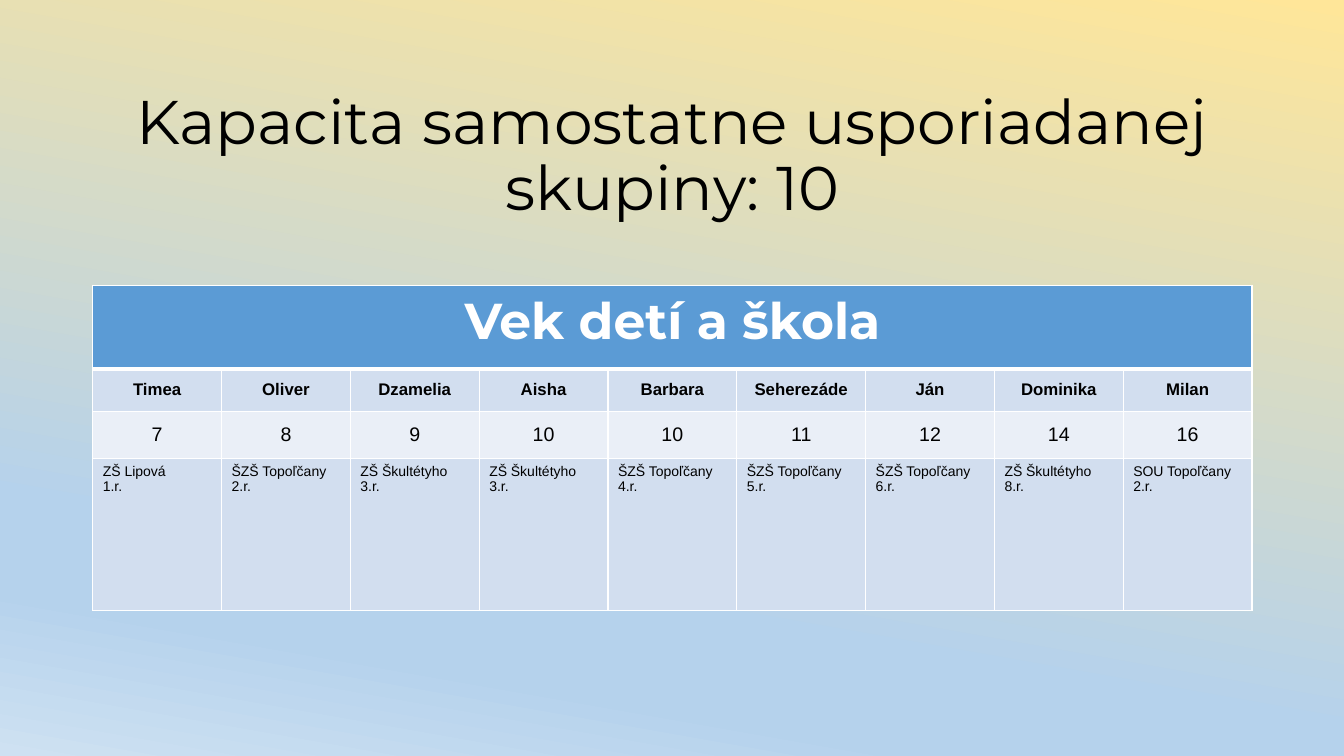
import dataclasses

import lxml.etree
import pptx
import pptx.dml.color
import pptx.enum.text
import pptx.oxml
import pptx.oxml.ns
import pptx.table
import pptx.text.text
import pptx.util

Inches = pptx.util.Inches
ALIGN = pptx.enum.text.PP_ALIGN
ANCHOR = pptx.enum.text.MSO_ANCHOR

COLOURS = {
    "text": "000000",
    "white": "FFFFFF",
    "header": "5B9BD5",
    "band": "D2DEEF",
    "light": "EAEFF7",
}
BACKGROUND_STOPS = [(0, "FFE699"), (74, "B5D2EC"), (83, "B5D2EC"), (100, "CEE1F2")]


@dataclasses.dataclass
class Style:
    size: int
    fill: str = "band"
    font: str = "Arial"
    colour: str = "text"
    bold: bool = False
    align: ALIGN = ALIGN.CENTER
    anchor: ANCHOR = ANCHOR.MIDDLE


@dataclasses.dataclass
class Child:
    name: str
    age: int
    school: list[str]


TITLE = Style(44, font="Montserrat")
HEADER = Style(36, "header", "Montserrat", "white", True, anchor=ANCHOR.TOP)
NAME = Style(12, bold=True)
AGE = Style(14, "light")
SCHOOL = Style(10, align=ALIGN.LEFT, anchor=ANCHOR.TOP)

CHILDREN = [
    Child("Timea", 7, ["ZŠ Lipová", "1.r."]),
    Child("Oliver", 8, ["ŠZŠ Topoľčany 2.r."]),
    Child("Dzamelia", 9, ["ZŠ Škultétyho 3.r."]),
    Child("Aisha", 10, ["ZŠ Škultétyho 3.r."]),
    Child("Barbara", 10, ["ŠZŠ Topoľčany 4.r."]),
    Child("Seherezáde", 11, ["ŠZŠ Topoľčany 5.r."]),
    Child("Ján", 12, ["ŠZŠ Topoľčany 6.r."]),
    Child("Dominika", 14, ["ZŠ Škultétyho 8.r."]),
    Child("Milan", 16, ["SOU Topoľčany 2.r."]),
]
ROW_HEIGHTS = [0.83, 0.42, 0.47, 1.51]
LEFT, WIDTH = 0.92, 11.5


def rgb(name: str) -> pptx.dml.color.RGBColor:
    return pptx.dml.color.RGBColor.from_string(COLOURS[name])


def write(frame: pptx.text.text.TextFrame, lines: list[str], style: Style) -> None:
    for index, line in enumerate(lines):
        para = frame.add_paragraph() if index else frame.paragraphs[0]
        para.alignment = style.align
        span = para.add_run()
        span.text = line
        span.font.name = style.font
        span.font.size = pptx.util.Pt(style.size)
        span.font.bold = style.bold
        span.font.color.rgb = rgb(style.colour)


def add_borders(cell: pptx.table._Cell, bottom: float = 1, top: float = 1) -> None:
    properties = cell._tc.get_or_add_tcPr()
    widths = {"lnL": 1, "lnR": 1, "lnT": top, "lnB": bottom}
    for index, (tag, width) in enumerate(widths.items()):
        line = pptx.oxml.parse_xml(
            f'<a:{tag} {pptx.oxml.ns.nsdecls("a")} w="{pptx.util.Pt(width)}">'
            f'<a:solidFill><a:srgbClr val="{COLOURS["white"]}"/></a:solidFill></a:{tag}>'
        )
        properties.insert(index, line)


def fill_cell(cell: pptx.table._Cell, lines: list[str], style: Style) -> None:
    cell.fill.solid()
    cell.fill.fore_color.rgb = rgb(style.fill)
    cell.vertical_anchor = style.anchor
    write(cell.text_frame, lines, style)


def main() -> None:
    deck = pptx.Presentation()
    deck.slide_width, deck.slide_height = Inches(13.33), Inches(7.5)
    page = deck.slides.add_slide(deck.slide_layouts[5])

    # Background gradient
    background = page.background.fill
    background.gradient()
    background.gradient_angle = 260
    stops = next(page.element.iter(pptx.oxml.ns.qn("a:gsLst")))
    for stop in list(stops):
        stops.remove(stop)
    for position, colour in BACKGROUND_STOPS:
        stop = lxml.etree.SubElement(stops, pptx.oxml.ns.qn("a:gs"), pos=str(position * 1000))
        lxml.etree.SubElement(stop, pptx.oxml.ns.qn("a:srgbClr"), val=colour)

    # Title
    title = page.shapes.title
    title.left, title.top = Inches(LEFT), Inches(0.4)
    title.width, title.height = Inches(WIDTH), Inches(2.33)
    frame = title.text_frame
    frame.word_wrap = True
    frame.auto_size = pptx.enum.text.MSO_AUTO_SIZE.NONE
    frame.vertical_anchor = TITLE.anchor
    write(frame, ["Kapacita samostatne usporiadanej skupiny: 10"], TITLE)
    frame.paragraphs[0].line_spacing = 0.9

    # Table of children
    table = page.shapes.add_table(
        len(ROW_HEIGHTS), len(CHILDREN),
        Inches(LEFT), Inches(2.83), Inches(WIDTH), Inches(sum(ROW_HEIGHTS)),
    ).table
    for row, height in zip(table.rows, ROW_HEIGHTS):
        row.height = Inches(height)
    table.cell(0, 0).merge(table.cell(0, len(CHILDREN) - 1))
    fill_cell(table.cell(0, 0), ["Vek detí a škola"], HEADER)
    for column, child in enumerate(CHILDREN):
        fill_cell(table.cell(1, column), [child.name], NAME)
        fill_cell(table.cell(2, column), [str(child.age)], AGE)
        fill_cell(table.cell(3, column), child.school, SCHOOL)
        for row in range(len(ROW_HEIGHTS)):
            add_borders(table.cell(row, column), 3 if row == 0 else 1, 3 if row == 1 else 1)

    deck.save("out.pptx")


if __name__ == "__main__":
    main()
